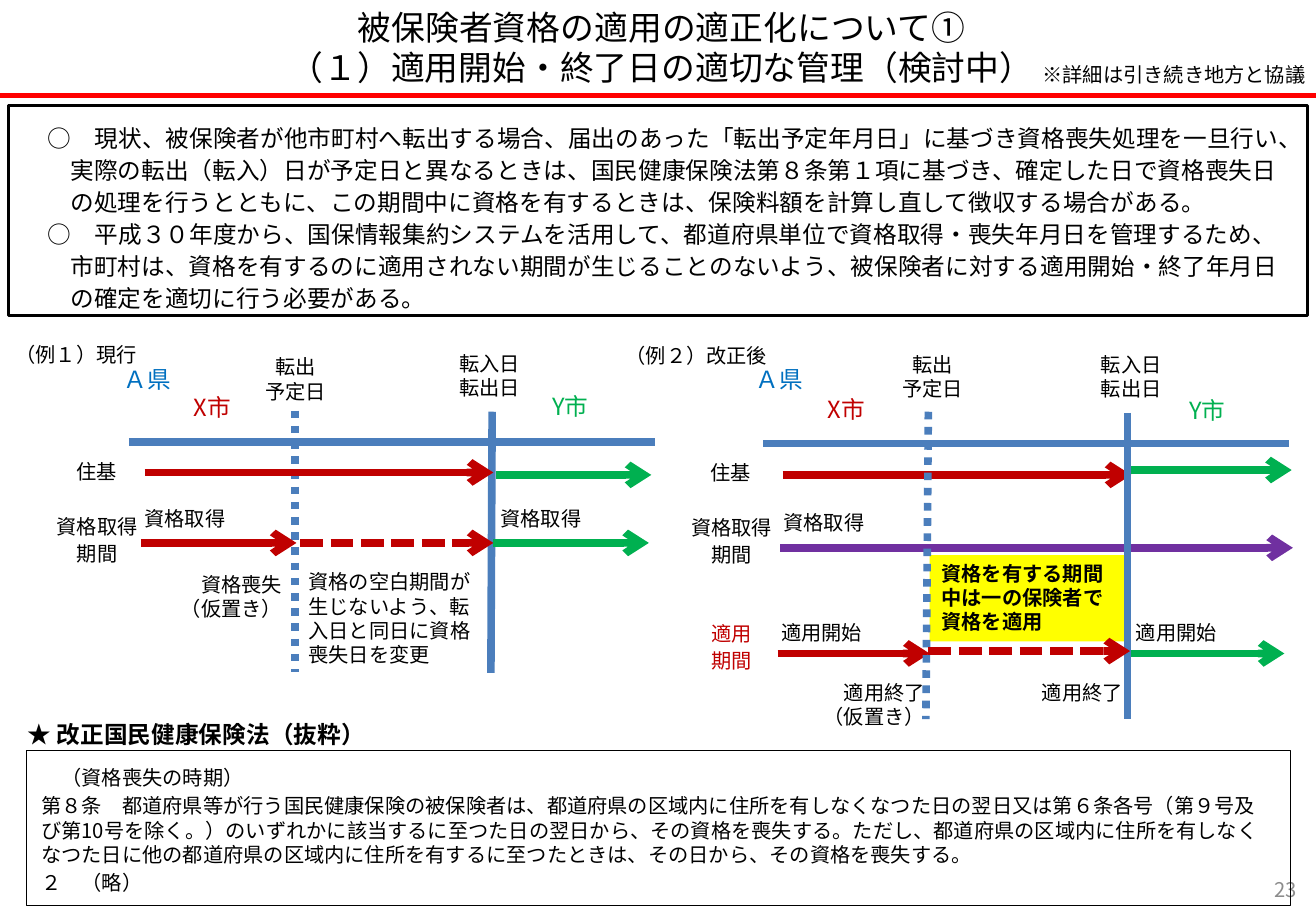
"""Build the slide on start and end dates of insurance coverage."""
from typing import NamedTuple, Optional

from lxml import etree
from pptx import Presentation
from pptx import util as u
from pptx.dml.color import RGBColor
from pptx.enum import dml, shapes, text
from pptx.oxml import ns

PX = 9144
JP = "Noto Sans CJK JP"
LATIN = "Calibri"
BLACK, WHITE, GREY, YELLOW = "000000", "FFFFFF", "8C8C8C", "FFFF00"
RED, GREEN, PURPLE, AXIS = "C00000", "00B050", "7030A0", "4B7EBC"
PREFECTURE, RULE = "0070C0", "FF0000"
LEFT, CENTER, RIGHT = text.PP_ALIGN.LEFT, text.PP_ALIGN.CENTER, text.PP_ALIGN.RIGHT
DOTS, DASHES = dml.MSO_LINE.ROUND_DOT, dml.MSO_LINE.SQUARE_DOT


class Style(NamedTuple):
    size: int = 12
    font: str = LATIN
    color: str = BLACK
    align: text.PP_ALIGN = LEFT
    leading: Optional[int] = None
    before: float = 0
    bold: bool = False


class Label(NamedTuple):
    x: int
    y: int
    w: int
    h: int
    words: str
    style: Style = Style()
    fill: Optional[str] = None


class Stroke(NamedTuple):
    x1: int
    y1: int
    x2: int
    y2: int
    color: str = AXIS
    dash: Optional[dml.MSO_LINE] = None
    arrow: bool = True
    weight: float = 4.5


NOTE = Style()
DATE = Style(align=CENTER)
ENDING = Style(align=RIGHT)
ROW = Style(font=JP, align=CENTER, leading=16)
PLACE = ROW._replace(size=14)
PREF, CITY_X, CITY_Y = (PLACE._replace(color=c) for c in (PREFECTURE, RED, GREEN))
HEADING = Style(20, JP, align=CENTER)
SUMMARY = Style(14, JP, leading=19)
LAW = Style(12, JP, before=2.4)

TITLE = "被保険者資格の適用の適正化について①\n（１）適用開始・終了日の適切な管理（検討中）"
POINTS = (
    "○　現状、被保険者が他市町村へ転出する場合、届出のあった「転出予定年月日」に基づき資格喪失処理を一旦行い、"
    "実際の転出（転入）日が予定日と異なるときは、国民健康保険法第８条第１項に基づき、確定した日で資格喪失日"
    "の処理を行うとともに、この期間中に資格を有するときは、保険料額を計算し直して徴収する場合がある。\n"
    "○　平成３０年度から、国保情報集約システムを活用して、都道府県単位で資格取得・喪失年月日を管理するため、"
    "市町村は、資格を有するのに適用されない期間が生じることのないよう、被保険者に対する適用開始・終了年月日"
    "の確定を適切に行う必要がある。"
)
ARTICLE = (
    "　（資格喪失の時期）\n"
    "第８条　都道府県等が行う国民健康保険の被保険者は、都道府県の区域内に住所を有しなくなつた日の翌日又は"
    "第６条各号（第９号及び第10号を除く。）のいずれかに該当するに至つた日の翌日から、その資格を喪失する。"
    "ただし、都道府県の区域内に住所を有しなくなつた日に他の都道府県の区域内に住所を有するに至つたときは、"
    "その日から、その資格を喪失する。\n"
    "２　（略）"
)

STROKES = [
    Stroke(-10, 79, 1115, 79, RULE, arrow=False, weight=3),
    Stroke(106, 364, 539, 364, arrow=False),
    Stroke(243, 338, 243, 553, dash=DOTS, arrow=False),
    Stroke(405, 339, 404, 554, arrow=False),
    Stroke(408, 391, 536, 391, GREEN),
    Stroke(119, 389, 406, 389, RED),
    Stroke(406, 447, 534, 447, GREEN),
    Stroke(116, 447, 244, 447, RED),
    Stroke(247, 447, 406, 447, RED, DASHES),
    Stroke(628, 365, 1061, 365, arrow=False),
    Stroke(644, 391, 931, 391, RED),
    Stroke(928, 387, 1063, 387, GREEN),
    Stroke(642, 451, 1064, 451, PURPLE),
    Stroke(640, 538, 765, 538, RED),
    Stroke(931, 538, 1057, 538, GREEN),
    Stroke(764, 339, 762, 592, dash=DOTS, arrow=False),
    Stroke(928, 340, 928, 592, arrow=False),
    Stroke(764, 536, 930, 536, RED, DASHES),
]

CALLOUT = Label(765, 457, 162, 71, "資格を有する期間中は一の保険者で資格を適用",
                Style(bold=True), YELLOW)

LABELS = [
    Label(848, 46, 269, 37, "※詳細は引き続き地方と協議"),
    Label(3, 277, 124, 35, "（例１）現行"),
    Label(87, 297, 69, 38, "Ａ県", PREF),
    Label(140, 320, 69, 33, "X市", CITY_X),
    Label(435, 319, 69, 38, "Y市", CITY_Y),
    Label(204, 287, 79, 59, "転出\n予定日", DATE),
    Label(362, 284, 82, 59, "転入日転出日", DATE),
    Label(46, 371, 67, 33, "住基", ROW),
    Label(33, 416, 94, 55, "資格取得\n期間", ROW),
    Label(109, 412, 120, 35, "資格取得"),
    Label(402, 412, 120, 35, "資格取得"),
    Label(122, 466, 120, 50, "資格喪失\n（仮置き）", ENDING),
    Label(244, 464, 162, 91, "資格の空白期間が生じないよう、転入日と同日に資格喪失日を変更"),
    Label(505, 278, 141, 36, "（例２）改正後"),
    Label(607, 297, 69, 38, "Ａ県", PREF),
    Label(662, 321, 69, 33, "X市", CITY_X),
    Label(959, 322, 69, 38, "Y市", CITY_Y),
    Label(728, 285, 79, 59, "転出\n予定日", DATE),
    Label(890, 285, 82, 59, "転入日転出日", DATE),
    Label(568, 372, 67, 33, "住基", ROW),
    Label(555, 417, 94, 55, "資格取得\n期間", ROW),
    Label(635, 415, 120, 35, "資格取得"),
    Label(555, 504, 94, 55, "適用\n期間", ROW._replace(color=RED)),
    Label(633, 506, 120, 35, "適用開始"),
    Label(925, 506, 120, 35, "適用開始"),
    Label(651, 555, 120, 50, "適用終了\n（仮置き）", ENDING),
    Label(814, 555, 120, 30, "適用終了", ENDING),
    Label(824, 717, 253, 30, "23", Style(12, JP, GREY, RIGHT)),
]


def rgb(value: str) -> RGBColor:
    return RGBColor.from_string(value)


def add_xml(parent, tag: str, **attributes: str):
    return etree.SubElement(parent, ns.qn(tag), attributes)


def place(shape, x: int, y: int, w: int, h: int) -> None:
    shape.left, shape.top, shape.width, shape.height = (v * PX for v in (x, y, w, h))


def write(frame, words: str, style: Style) -> None:
    frame.word_wrap = True
    frame.auto_size = text.MSO_AUTO_SIZE.NONE
    for index, line in enumerate(words.split("\n")):
        paragraph = frame.add_paragraph() if index else frame.paragraphs[0]
        paragraph.alignment = style.align
        paragraph.space_before = u.Pt(style.before)
        if style.leading:
            paragraph.line_spacing = u.Pt(style.leading)
        run = paragraph.add_run()
        run.text = line
        run.font.size, run.font.bold = u.Pt(style.size), style.bold
        run.font.color.rgb = rgb(style.color)
        run.font.name = style.font
        add_xml(run.font._element, "a:ea", typeface=JP)


def set_insets(frame, left: int, top: int, right: int, bottom: int) -> None:
    frame.margin_left, frame.margin_top = left * PX, top * PX
    frame.margin_right, frame.margin_bottom = right * PX, bottom * PX


def draw_label(slide, label: Label):
    box = slide.shapes.add_textbox(*(v * PX for v in label[:4]))
    write(box.text_frame, label.words, label.style)
    if label.fill:
        box.fill.solid()
        box.fill.fore_color.rgb = rgb(label.fill)
    return box


def draw_stroke(slide, stroke: Stroke) -> None:
    line = slide.shapes.add_connector(
        shapes.MSO_CONNECTOR.STRAIGHT, *(v * PX for v in stroke[:4]))
    line.line.color.rgb = rgb(stroke.color)
    line.line.width = u.Pt(stroke.weight)
    if stroke.dash:
        line.line.dash_style = stroke.dash
    if stroke.arrow:
        add_xml(line.line._get_or_add_ln(), "a:tailEnd", type="arrow")
    add_xml(line.element.spPr, "a:effectLst")


def outline(shape, weight: float) -> None:
    shape.line.color.rgb = rgb(BLACK)
    shape.line.width = u.Pt(weight)


def draw_summary(summary) -> None:
    place(summary, 7, 87, 1069, 173)
    write(summary.text_frame, POINTS, SUMMARY)
    set_insets(summary.text_frame, 12, 12, 12, 12)
    outline(summary, 1.5)
    for paragraph in summary.text_frame.paragraphs:
        properties = paragraph._p.get_or_add_pPr()
        properties.set("marL", str(39 * PX))
        properties.set("indent", str(-19 * PX))
        add_xml(properties, "a:buNone")


def main() -> None:
    deck = Presentation()
    deck.slide_width, deck.slide_height = 1083 * PX, 750 * PX
    slide = deck.slides.add_slide(deck.slide_layouts[1])
    title = slide.shapes.title
    place(title, 67, 0, 955, 77)
    write(title.text_frame, TITLE, HEADING)
    draw_summary(slide.placeholders[1])
    draw_label(slide, CALLOUT)
    for stroke in STROKES:
        draw_stroke(slide, stroke)
    for label in LABELS:
        draw_label(slide, label)
    law_heading = draw_label(slide, Label(
        3, 578, 365, 40, "★ 改正国民健康保険法（抜粋）", SUMMARY._replace(bold=True)))
    set_insets(law_heading.text_frame, 20, 12, 10, 5)
    law = draw_label(slide, Label(22, 618, 1040, 127, ARTICLE, LAW))
    set_insets(law.text_frame, 12, 12, 16, 5)
    outline(law, 0.25)
    deck.save("out.pptx")


if __name__ == "__main__":
    main()
